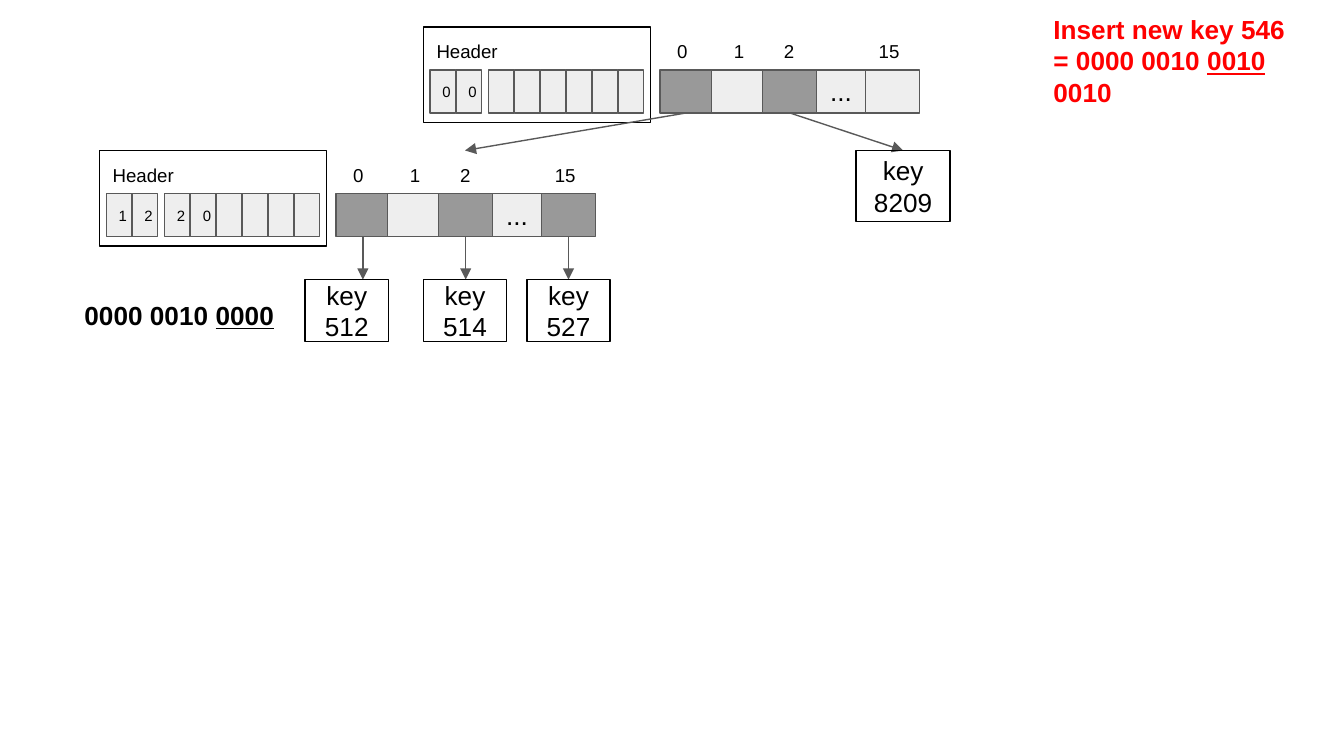
from lxml import etree
from pptx import Presentation
from pptx.dml.color import RGBColor
from pptx.enum import shapes, text
from pptx.oxml import ns
from pptx.util import Inches, Pt

BLACK = RGBColor(0x00, 0x00, 0x00)
RED = RGBColor(0xFF, 0x00, 0x00)
EDGE = RGBColor(0x59, 0x59, 0x59)
EMPTY = RGBColor(0xEE, 0xEE, 0xEE)
USED = RGBColor(0x99, 0x99, 0x99)
FONT = "Arial"

# Content: tree nodes, with header bytes and the child slots in use
NODES = [
    {"at": (3.15, 0.2), "level": "00", "prefix": "", "used": {"0", "2"}},
    {"at": (0.74, 1.12), "level": "12", "prefix": "20", "used": {"0", "2", "15"}},
]
PREFIX_BYTES = 6
SLOTS = ["0", "1", "2", "...", "15"]
LABEL_SHIFT = {"0": 0.03, "1": 0.07, "2": 0.06, "15": 0}

# Leaves: key, left, top, width, height
LEAVES = [
    ("8209", 6.37, 1.12, 0.7, 0.53),
    ("512", 2.27, 2.08, 0.62, 0.46),
    ("514", 3.15, 2.08, 0.62, 0.46),
    ("527", 3.92, 2.08, 0.62, 0.46),
]
# Pointers: node index, slot, end point (x of None means straight down)
POINTERS = [
    (0, "0", 3.46, 1.12),
    (0, "2", 6.72, 1.12),
    (1, "0", None, 2.08),
    (1, "2", None, 2.08),
    (1, "15", None, 2.08),
]
# Notes: place, colour, paragraphs of (text, underlined) runs
NOTES = [
    ((0.53, 2.13, 1.65, 0.36), BLACK, [[("0000 0010 ", False), ("0000", True)]]),
    ((7.74, 0, 2.26, 0.63), RED, [
        [("Insert new key 546", False)],
        [("= 0000 0010 ", False), ("0010", True), (" 0010", False)],
    ]),
]

# Node geometry, relative to the node's left and top
HEADER_W, HEADER_H = 1.69, 0.71
ROW_TOP, ROW_H = 0.32, 0.32
BYTE_LEFT, BYTE_W, BYTE_STEP, BYTE_GAP = 0.05, 0.19, 1.54 / 8, 0.05
SLOT_LEFT, SLOT_W, SLOT_STEP = 1.76, 0.4, 1.53 / 4


def write(shape, paragraphs, size, color=BLACK, bold=False, centred=False):
    frame = shape.text_frame
    frame.word_wrap = True
    frame.auto_size = text.MSO_AUTO_SIZE.NONE
    frame.margin_left = frame.margin_right = Inches(0.1)
    frame.margin_top = frame.margin_bottom = Inches(0.1)
    frame.vertical_anchor = text.MSO_ANCHOR.MIDDLE if centred else text.MSO_ANCHOR.TOP
    for i, runs in enumerate(paragraphs):
        paragraph = frame.paragraphs[0] if i == 0 else frame.add_paragraph()
        paragraph.alignment = text.PP_ALIGN.CENTER if centred else text.PP_ALIGN.LEFT
        for words, underlined in runs:
            run = paragraph.add_run()
            run.text = words
            run.font.name, run.font.size = FONT, Pt(size)
            run.font.bold, run.font.underline = bold, underlined
            run.font.color.rgb = color


def add_box(parent, place, fill=None, line=BLACK, lines=(), size=14, centred=True):
    box = parent.shapes.add_shape(shapes.MSO_SHAPE.RECTANGLE, *map(Inches, place))
    box.shadow.inherit = False
    if fill is None:
        box.fill.background()
    else:
        box.fill.solid()
        box.fill.fore_color.rgb = fill
    box.line.color.rgb = line
    box.line.width = Pt(0.75)
    write(box, [[(words, False)] for words in lines], size, centred=centred)


def add_label(parent, place, paragraphs, size, **style):
    label = parent.shapes.add_textbox(*map(Inches, place))
    write(label, paragraphs, size, **style)


def slot_left(node, slot):
    return node["at"][0] + SLOT_LEFT + SLOTS.index(slot) * SLOT_STEP


def add_node(slide, node):
    left, top = node["at"]
    row = top + ROW_TOP
    group = slide.shapes.add_group_shape()
    add_box(group, (left, top, HEADER_W, HEADER_H), lines=["Header"], size=10, centred=False)

    # Header bytes: two for the level, a gap, then the prefix
    header_bytes = list(node["level"]) + list(node["prefix"].ljust(PREFIX_BYTES))
    for i, value in enumerate(header_bytes):
        x = left + BYTE_LEFT + i * BYTE_STEP
        if i >= len(node["level"]):
            x += BYTE_GAP
        add_box(group, (x, row, BYTE_W, ROW_H), EMPTY, EDGE, value.split(), size=8)

    # Child slots, the ellipsis lying behind its neighbours
    for slot in sorted(SLOTS, key=lambda name: name != "..."):
        x = slot_left(node, slot)
        fill = USED if slot in node["used"] else EMPTY
        dots = [slot] if slot == "..." else []
        add_box(group, (x, row, SLOT_W, ROW_H), fill, EDGE, dots)
        if not dots:
            width = 0.27 if len(slot) == 1 else 0.4
            add_label(group, (x + LABEL_SHIFT[slot], top, width, ROW_H), [[(slot, False)]], 10)


def add_pointer(slide, node, slot, end_x, end_y):
    x = slot_left(node, slot) + SLOT_W / 2
    y = node["at"][1] + ROW_TOP + ROW_H
    ends = (x, y, x if end_x is None else end_x, end_y)
    arrow = slide.shapes.add_connector(shapes.MSO_CONNECTOR.STRAIGHT, *map(Inches, ends))
    arrow.line.color.rgb = EDGE
    arrow.line.width = Pt(0.75)
    properties = arrow.element.spPr
    etree.SubElement(properties.find(ns.qn("a:ln")), ns.qn("a:tailEnd"),
                     type="triangle", w="med", len="med")
    etree.SubElement(properties, ns.qn("a:effectLst"))


def main():
    deck = Presentation()
    # Widescreen, 16:9
    deck.slide_width, deck.slide_height = Inches(10), Inches(10 * 9 / 16)
    slide = deck.slides.add_slide(deck.slide_layouts[6])

    for node in NODES:
        add_node(slide, node)
    for index, slot, end_x, end_y in POINTERS:
        add_pointer(slide, NODES[index], slot, end_x, end_y)
    for key, *place in LEAVES:
        add_box(slide, place, lines=["key", key])
    for place, color, paragraphs in NOTES:
        add_label(slide, place, paragraphs, 14, color=color, bold=True)

    deck.save("out.pptx")


if __name__ == "__main__":
    main()
